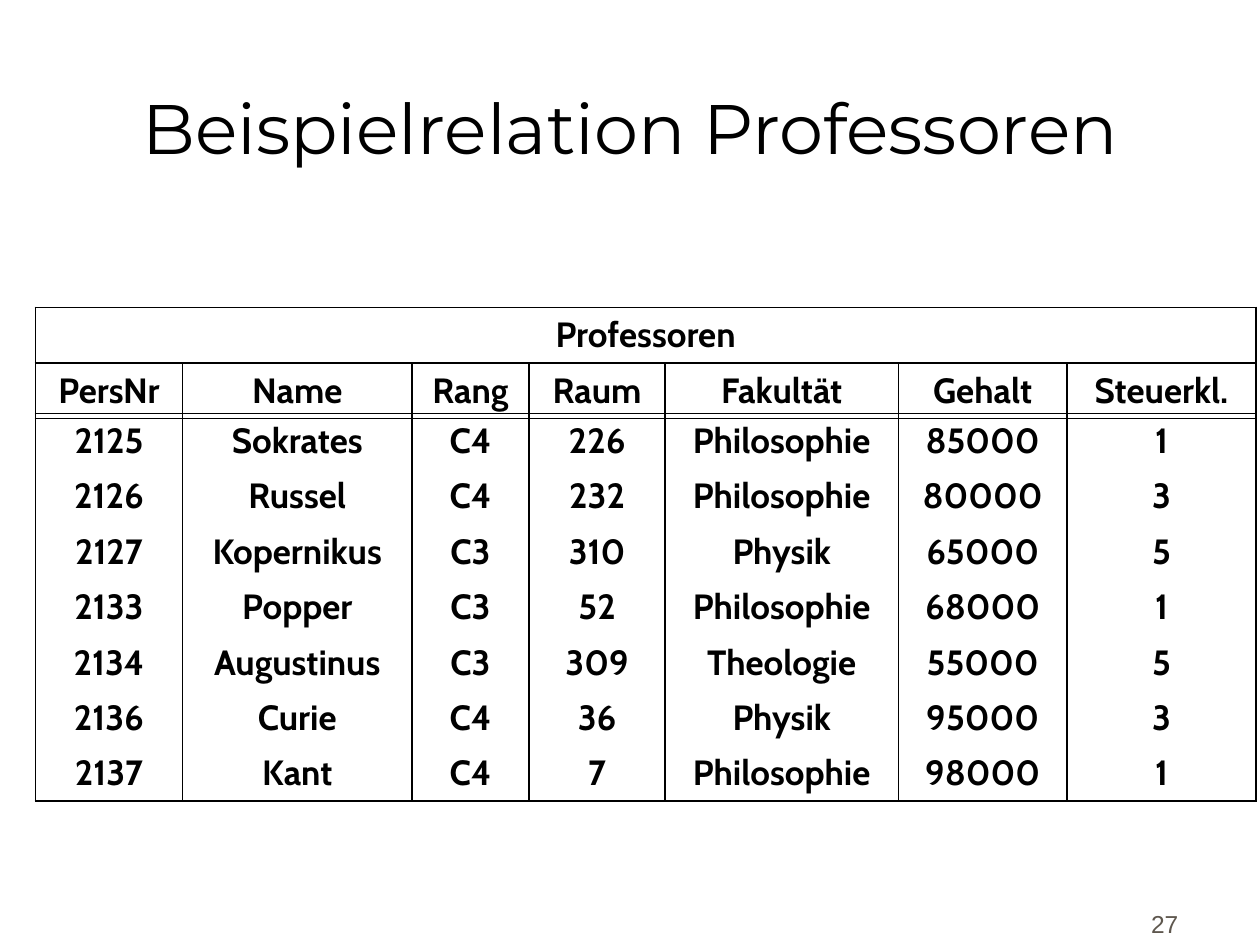
from lxml.etree import SubElement
from pptx import Presentation
from pptx.dml.color import RGBColor
from pptx.enum.text import MSO_ANCHOR, PP_ALIGN
from pptx.oxml.ns import qn
from pptx.util import Inches, Pt

BLACK = "000000"
GREY = "5E574E"
COLS = [1.17, 1.82, 0.93, 1.08, 1.85, 1.34, 1.5]
ROW = 0.44
LEFT = 0.28

HEAD = [
    ["Professoren"] + [""] * 6,
    ["PersNr", "Name", "Rang", "Raum", "Fakultät", "Gehalt", "Steuerkl."],
]
DATA = [
    ["2125", "Sokrates", "C4", "226", "Philosophie", "85000", "1"],
    ["2126", "Russel", "C4", "232", "Philosophie", "80000", "3"],
    ["2127", "Kopernikus", "C3", "310", "Physik", "65000", "5"],
    ["2133", "Popper", "C3", "52", "Philosophie", "68000", "1"],
    ["2134", "Augustinus", "C3", "309", "Theologie", "55000", "5"],
    ["2136", "Curie", "C4", "36", "Physik", "95000", "3"],
    ["2137", "Kant", "C4", "7", "Philosophie", "98000", "1"],
]


def paint(target, color):
    target.rgb = RGBColor.from_string(color)


def write(frame, text, font, size, color=BLACK, align=PP_ALIGN.CENTER, bold=False):
    para = frame.paragraphs[0]
    para.alignment = align
    run = para.add_run()
    run.text = text
    run.font.name = font
    run.font.size = Pt(size)
    run.font.bold = bold
    paint(run.font.color, color)


def edge(cell, sides):
    """Draw the sides named among L, R, T and B; clear the others."""
    props = cell._tc.get_or_add_tcPr()
    for side in "LRTB":
        line = SubElement(props, qn(f"a:ln{side}"), w=str(Pt(1)))
        if side in sides:
            fill = SubElement(line, qn("a:solidFill"))
            SubElement(fill, qn("a:srgbClr"), val=BLACK)
        else:
            SubElement(line, qn("a:noFill"))


def add_title(slide, text):
    title = slide.shapes.title
    title.left, title.top = Inches(0), Inches(0)
    title.width, title.height = Inches(10), Inches(1.39)
    title.text_frame.vertical_anchor = MSO_ANCHOR.BOTTOM
    write(title.text_frame, text, "Montserrat", 40)


def add_grid(slide, top, rows, inner):
    """Add a table; inner tells whether lines run between its rows."""
    frame = slide.shapes.add_table(
        len(rows), len(COLS), Inches(LEFT), Inches(top),
        Inches(sum(COLS)), Inches(ROW * len(rows)))
    table = frame.table
    table.first_row = table.horz_banding = False
    for col, width in zip(table.columns, COLS):
        col.width = Inches(width)
    last = len(rows) - 1
    for r, row in enumerate(rows):
        table.rows[r].height = Inches(ROW)
        sides = "LR"
        if inner or r == 0:
            sides += "T"
        if inner or r == last:
            sides += "B"
        for c, text in enumerate(row):
            cell = table.cell(r, c)
            edge(cell, sides)
            cell.fill.background()
            if text:
                write(cell.text_frame, text, "Cabin", 20, bold=True)
    return table


def add_number(slide, text):
    box = slide.shapes.add_textbox(Inches(8.47), Inches(7), Inches(0.98), Inches(0.5))
    box.text_frame.word_wrap = True
    box.text_frame.vertical_anchor = MSO_ANCHOR.BOTTOM
    write(box.text_frame, text, "Arial", 14, GREY, PP_ALIGN.RIGHT)


def main():
    deck = Presentation()
    deck.slide_width, deck.slide_height = Inches(10), Inches(7.5)
    slide = deck.slides.add_slide(deck.slide_layouts[5])
    add_number(slide, "27")
    add_title(slide, "Beispielrelation Professoren")
    head = add_grid(slide, 2.44, HEAD, inner=True)
    head.cell(0, 0).merge(head.cell(0, len(COLS) - 1))
    add_grid(slide, 3.28, DATA, inner=False)
    deck.save("out.pptx")


if __name__ == "__main__":
    main()
